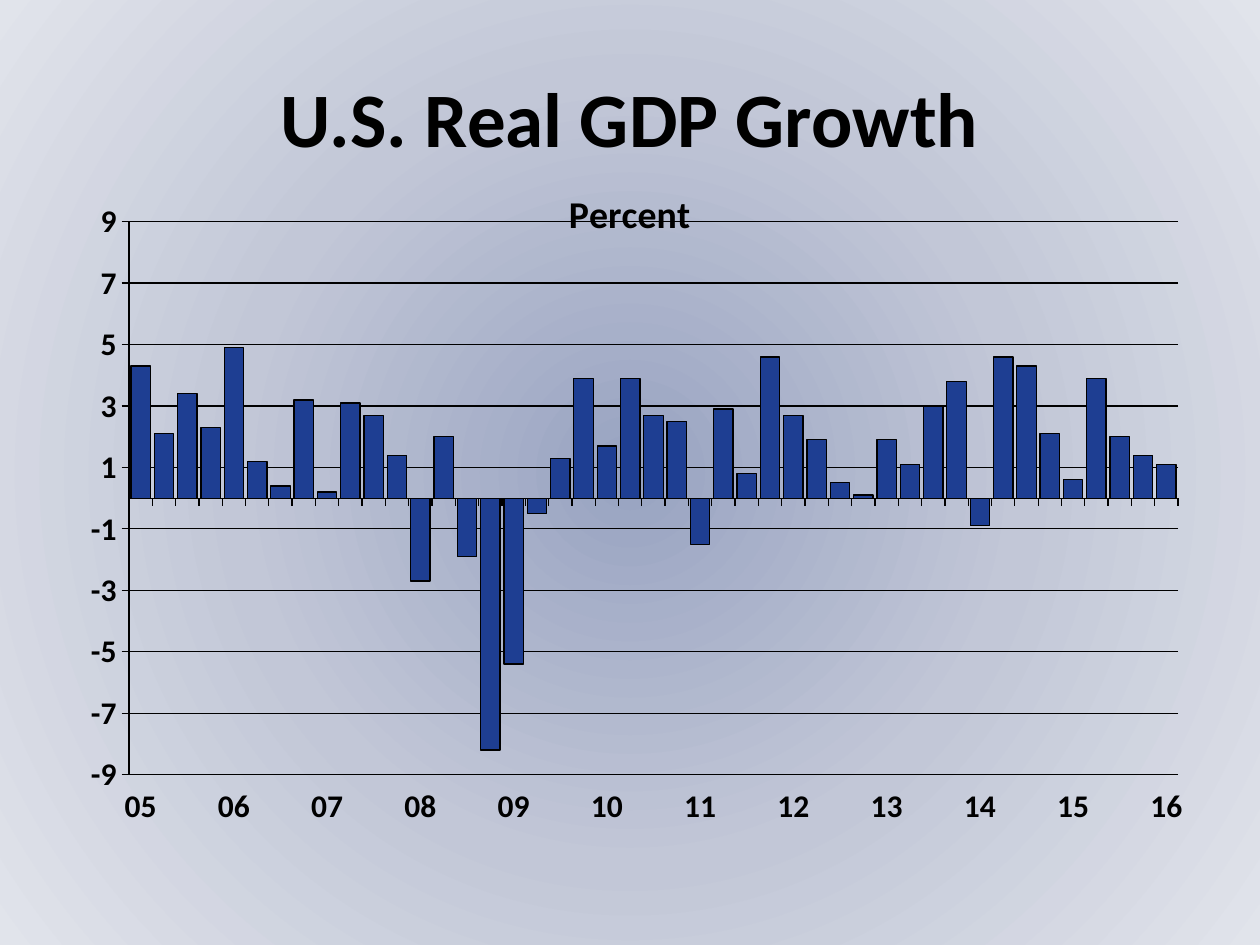
from pptx import Presentation
from pptx.chart.data import CategoryChartData
from pptx.dml.color import RGBColor as RGB
from pptx.enum.chart import XL_CHART_TYPE as ChartType, XL_TICK_LABEL_POSITION as LabelPosition, XL_TICK_MARK as Tick
from pptx.enum.text import MSO_ANCHOR as Anchor, PP_ALIGN as Align
from pptx.oxml import parse_xml
from pptx.oxml.ns import nsdecls, qn
from pptx.util import Cm, Pt

HEADLINE = "U.S. Real GDP Growth"
UNIT = "Percent"
FIRST_YEAR = 5
GROWTH = [
    4.3, 2.1, 3.4, 2.3, 4.9, 1.2, 0.4, 3.2, 0.2, 3.1, 2.7, 1.4,
    -2.7, 2, -1.9, -8.2, -5.4, -0.5, 1.3, 3.9, 1.7, 3.9, 2.7, 2.5,
    -1.5, 2.9, 0.8, 4.6, 2.7, 1.9, 0.5, 0.1, 1.9, 1.1, 3, 3.8,
    -0.9, 4.6, 4.3, 2.1, 0.6, 3.9, 2, 1.4, 1.1,
]
QUARTERS = [
    f"{FIRST_YEAR + i // 4:02d}" if i % 4 == 0 else "" for i in range(len(GROWTH))
]

THEME = {
    "font": "Calibri",
    "ink": RGB.from_string("000000"),
    "bar": RGB.from_string("1E3E92"),
    "backdrop": [(0, "98A3C1"), (50, "C2C7D7"), (100, "E1E4EB")],
    "headline": Pt(44),
    "unit": Pt(21.6),
    "labels": Pt(18),
    "rule": Pt(0.75),
}
MARGIN, WIDTH = Cm(1.27), Cm(22.86)
CHART_TOP, CHART_HEIGHT = Cm(3.18), Cm(13.84)


def style_font(font, size):
    font.name, font.size, font.bold = THEME["font"], size, True
    font.color.rgb = THEME["ink"]


def style_line(line):
    line.color.rgb, line.width = THEME["ink"], THEME["rule"]


def paint_backdrop(slide):
    stops = "".join(
        f'<a:gs pos="{pos * 1000}"><a:srgbClr val="{color}"/></a:gs>'
        for pos, color in THEME["backdrop"]
    )
    slide.background.fill.solid()
    solid = slide.element.find(".//" + qn("p:bgPr")).find(qn("a:solidFill"))
    gradient = parse_xml(
        f'<a:gradFill {nsdecls("a")} rotWithShape="1"><a:gsLst>{stops}</a:gsLst>'
        '<a:path path="circle"><a:fillToRect l="50000" t="50000" r="50000" b="50000"/>'
        "</a:path></a:gradFill>"
    )
    solid.getparent().replace(solid, gradient)


def place(parent, index, inner=False, **lengths):
    for old in parent.findall(qn("c:layout")):
        parent.remove(old)
    target = '<c:layoutTarget val="inner"/>' if inner else ""
    modes = "".join(f'<c:{key}Mode val="edge"/>' for key in "xy")
    values = "".join(
        f'<c:{key} val="{length / (WIDTH if key in "xw" else CHART_HEIGHT)}"/>'
        for key, length in lengths.items()
    )
    parent.insert(index, parse_xml(
        f'<c:layout {nsdecls("c")}><c:manualLayout>{target}{modes}{values}'
        "</c:manualLayout></c:layout>"
    ))


def add_headline(slide):
    headline = slide.shapes.add_textbox(MARGIN, Cm(0.76), WIDTH, Cm(3.18)).text_frame
    headline.word_wrap = True
    headline.vertical_anchor = Anchor.MIDDLE
    line = headline.paragraphs[0]
    line.alignment = Align.CENTER
    run = line.add_run()
    run.text = HEADLINE
    style_font(run.font, THEME["headline"])


def add_growth_chart(slide):
    data = CategoryChartData()
    data.categories = QUARTERS
    data.add_series("Series 1", GROWTH)
    chart = slide.shapes.add_chart(
        ChartType.COLUMN_CLUSTERED, MARGIN, CHART_TOP, WIDTH, CHART_HEIGHT, data
    ).chart
    style_font(chart.font, THEME["labels"])
    chart.has_legend = False

    unit = chart.chart_title.text_frame.paragraphs[0].add_run()
    unit.text = UNIT
    style_font(unit.font, THEME["unit"])
    chart.chart_title.include_in_layout = True
    root = chart.plots[0]._element.getroottree().getroot()
    place(root.find(".//" + qn("c:title")), 1, x=Cm(10.06), y=Cm(0.45))
    place(root.find(".//" + qn("c:plotArea")), 0, inner=True,
          x=Cm(1.33), y=Cm(1.29), w=Cm(21.15), h=Cm(11.15))

    columns = chart.plots[0]
    columns.gap_width, columns.overlap = 20, 70
    columns.vary_by_categories = False
    growth = columns.series[0]
    growth.invert_if_negative = False
    growth.format.fill.solid()
    growth.format.fill.fore_color.rgb = THEME["bar"]
    style_line(growth.format.line)

    quarters, percent = chart.category_axis, chart.value_axis
    for axis in (quarters, percent):
        style_line(axis.format.line)
        axis.major_tick_mark, axis.minor_tick_mark = Tick.OUTSIDE, Tick.NONE
        style_font(axis.tick_labels.font, THEME["labels"])
    quarters.has_major_gridlines = False
    quarters.tick_label_position = LabelPosition.LOW
    percent.minimum_scale, percent.maximum_scale, percent.major_unit = -9, 9, 2
    percent.has_major_gridlines = True
    style_line(percent.major_gridlines.format.line)


def main():
    deck = Presentation()
    deck.slide_width, deck.slide_height = Cm(25.4), Cm(19.05)
    slide = deck.slides.add_slide(deck.slide_layouts[6])
    paint_backdrop(slide)
    add_headline(slide)
    add_growth_chart(slide)
    deck.save("out.pptx")


if __name__ == "__main__":
    main()
